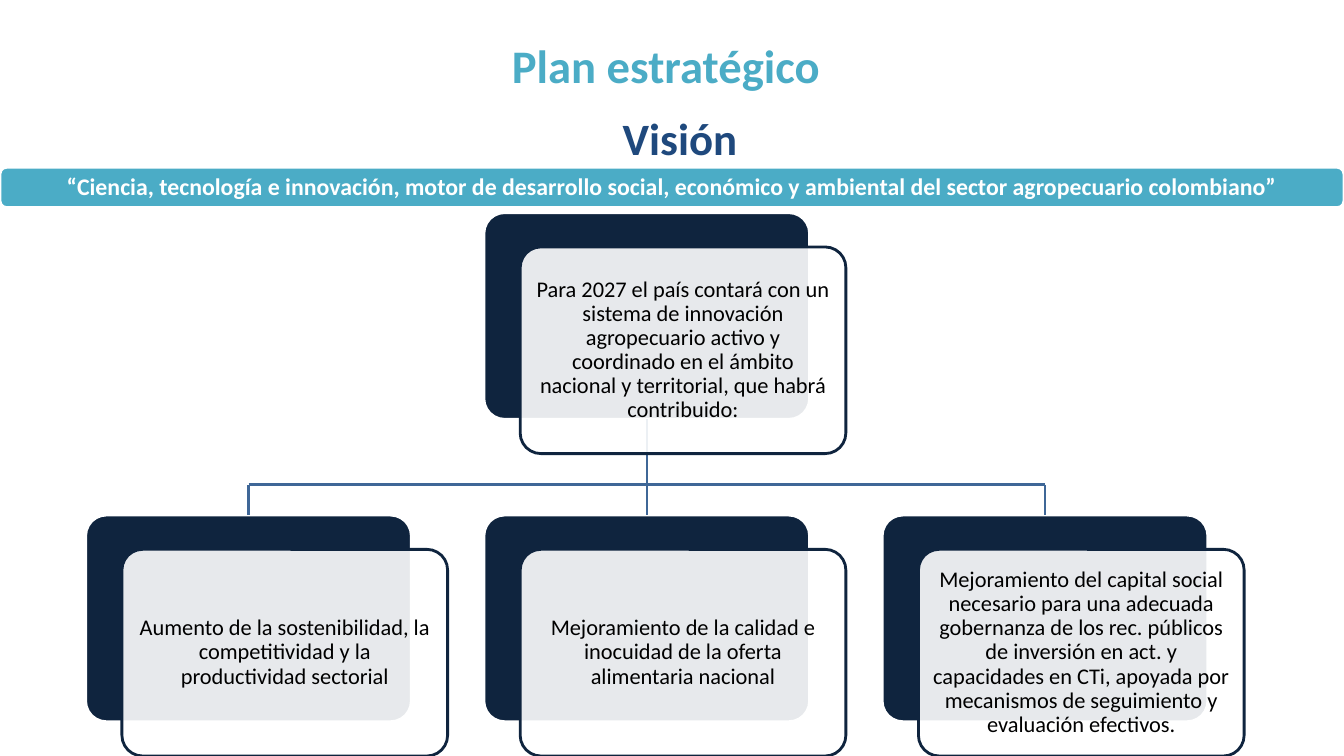
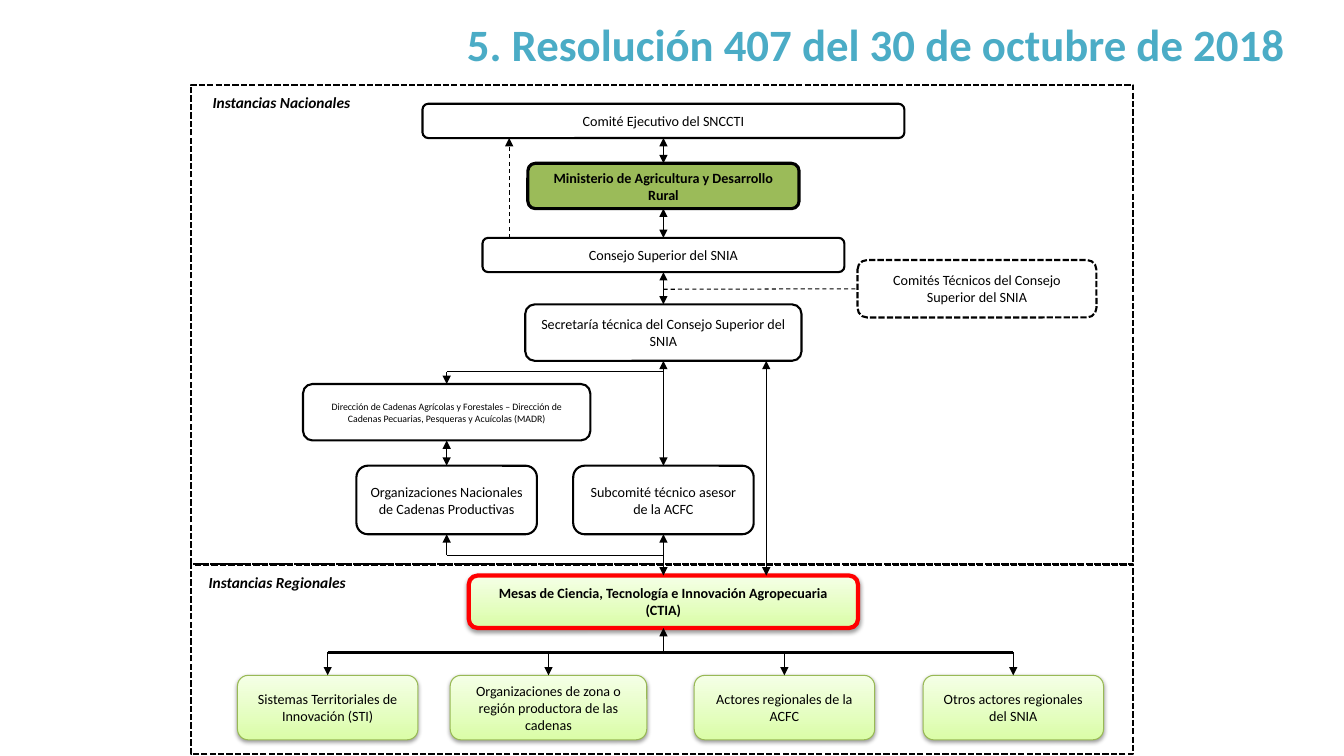
import pptx
import pptx.util
import pptx.dml.color
import pptx.enum.dml
import pptx.enum.shapes
import pptx.enum.text
import pptx.oxml.ns
from lxml import etree

Inch, Pt = pptx.util.Inches, pptx.util.Pt
RGB = pptx.dml.color.RGBColor
Shape = pptx.enum.shapes.MSO_SHAPE
Dash = pptx.enum.dml.MSO_LINE
Align = pptx.enum.text.PP_ALIGN
Mid = pptx.enum.text.MSO_ANCHOR.MIDDLE
Top = pptx.enum.text.MSO_ANCHOR.TOP
qn = pptx.oxml.ns.qn

# Shared look
FONT = "Calibri"
WHITE = RGB(0xFF, 0xFF, 0xFF)
BLACK = RGB(0, 0, 0)
TEAL = RGB(0x4B, 0xAC, 0xC6)
BLUE = RGB(0x1F, 0x49, 0x7D)
NAVY = RGB(0x0F, 0x24, 0x3E)
STEEL = RGB(0x3F, 0x67, 0x97)
GREEN = RGB(0x9B, 0xBB, 0x59)
LEAF = RGB(0x98, 0xB9, 0x55)
RED = RGB(0xFF, 0, 0)
LIME = RGB(0xDA, 0xFD, 0xA7)
PALE = RGB(0xF5, 0xFF, 0xE7)
WIDE, HIGH = 13.33, 7.5

# Slide 1 content
MOTTO = ("“Ciencia, tecnología e innovación, motor de desarrollo social, "
         "económico y ambiental del sector agropecuario colombiano”")
ROOT = ("Para 2027 el país contará con un sistema de innovación agropecuario "
        "activo y coordinado en el ámbito nacional y territorial, que habrá "
        "contribuido:")
GOALS = [
    "Aumento de la sostenibilidad, la competitividad y la productividad "
    "sectorial",
    "Mejoramiento de la calidad e inocuidad de la oferta alimentaria nacional",
    "Mejoramiento del capital social necesario para una adecuada gobernanza "
    "de los rec. públicos de inversión en act. y capacidades en CTi, apoyada "
    "por mecanismos de seguimiento y evaluación efectivos.",
]

# Slide 2 content: main axis, left axis, bus height
AXIS, LEFT, BUS = 6.58, 4.43, 6.47
FRAMES = [(0.84, 4.76), (5.6, 1.88)]
LABELS = [("Instancias Nacionales", 2.01, 0.87),
          ("Instancias Regionales", 1.97, 5.64)]

# Style: fill, line, line width, dash, bold, size
STYLES = {
    "plain": (WHITE, BLACK, 1.5, None, False, 10.1),
    "small": (WHITE, BLACK, 1.5, None, False, 7),
    "dash": (WHITE, BLACK, 1.5, Dash.SQUARE_DOT, False, 10.1),
    "lead": (GREEN, BLACK, 2.25, None, True, 10.1),
    "hub": ((LIME, PALE), RED, 3, None, True, 10.1),
    "local": ((LIME, PALE), LEAF, 0.75, None, False, 10.1),
}

# Box: key, style, centre x, top, width, height, words
BOXES = [
    ("exec", "plain", AXIS, 1.03, 4.78, 0.34, "Comité Ejecutivo del SNCCTI"),
    ("min", "lead", AXIS, 1.62, 2.69, 0.45,
     "Ministerio de Agricultura y Desarrollo Rural"),
    ("board", "plain", AXIS, 2.36, 3.59, 0.34, "Consejo Superior del SNIA"),
    ("tech", "dash", 9.69, 2.58, 2.37, 0.57,
     "Comités Técnicos del Consejo Superior del SNIA"),
    ("sec", "plain", AXIS, 3.02, 2.74, 0.56,
     "Secretaría técnica del Consejo Superior del SNIA"),
    ("chain", "small", LEFT, 3.81, 2.85, 0.56,
     "Dirección de Cadenas Agrícolas y Forestales – Dirección de Cadenas "
     "Pecuarias, Pesqueras y Acuícolas (MADR)"),
    ("org", "plain", LEFT, 4.62, 1.79, 0.68,
     "Organizaciones Nacionales de Cadenas Productivas"),
    ("sub", "plain", AXIS, 4.62, 1.79, 0.68,
     "Subcomité técnico asesor de la ACFC"),
    ("hub", "hub", AXIS, 5.71, 3.86, 0.52,
     "Mesas de Ciencia, Tecnología e Innovación Agropecuaria (CTIA)"),
]
LOCAL = [
    (3.25, 1.79, "Sistemas Territoriales de Innovación (STI)"),
    (5.44, 1.95, "Organizaciones de zona o región productora de las cadenas"),
    (7.78, 1.79, "Actores regionales de la ACFC"),
    (10.05, 1.79, "Otros actores regionales del SNIA"),
]
BOXES += [(f"local{i}", "local", x, 6.7, w, 0.64, words)
          for i, (x, w, words) in enumerate(LOCAL)]

# Link: from, to, arrow ends, dashed; an end is (key, side) or (x, y)
LINKS = [
    (("exec", 2), ("min", 0), "both", False),
    (("min", 2), ("board", 0), "both", False),
    (("board", 2), ("sec", 0), "both", False),
    (("sec", 2), ("sub", 0), "both", False),
    (("chain", 2), ("org", 0), "both", False),
    ((7.6, 3.58), (7.6, 5.71), "both", False),
    ((5.05, 2.36), (5.05, 1.37), "tail", True),
    ((AXIS, 2.87), ("tech", 1), "", True),
    ((AXIS, 3.69), (LEFT, 3.69), "", False),
    ((LEFT, 3.69), ("chain", 0), "tail", False),
    ((AXIS, 5.51), (LEFT, 5.51), "", False),
    ((LEFT, 5.51), ("org", 2), "tail", False),
    ((AXIS, 5.51), ("sub", 2), "tail", False),
    ((AXIS, 5.51), ("hub", 0), "tail", False),
    ((AXIS, BUS), ("hub", 2), "tail", False),
]
LINKS += [((x, BUS), (f"local{i}", 0), "tail", False)
          for i, (x, _, _) in enumerate(LOCAL)]


def write(shape, words, size, color, bold=False, italic=False,
          align=Align.CENTER, anchor=Mid, inset=None, space=None):
    frame = shape.text_frame
    frame.word_wrap = True
    frame.vertical_anchor = anchor
    if inset is not None:
        frame.margin_left = frame.margin_right = Inch(inset)
        frame.margin_top = frame.margin_bottom = Inch(inset)
    para = frame.paragraphs[0]
    para.alignment = align
    if space:
        para.line_spacing = space
    run = para.add_run()
    run.text = words
    font = run.font
    font.name, font.size, font.color.rgb = FONT, Pt(size), color
    font.bold, font.italic = bold, italic


def label(slide, words, at, size, color, **look):
    box = slide.shapes.add_textbox(*map(Inch, at))
    write(box, words, size, color, **look)


def title(slide, words, at, size=32, color=TEAL, anchor=Mid):
    label(slide, words, at, size, color, bold=True, anchor=anchor)


def block(slide, at, fill, line, width, dash=None, kind=Shape.ROUNDED_RECTANGLE):
    shape = slide.shapes.add_shape(kind, *map(Inch, at))
    shape.shadow.inherit = False
    if fill is None:
        shape.fill.background()
    elif isinstance(fill[0], RGB):
        shape.fill.gradient()
        shape.fill.gradient_angle = 90
        for stop, color in zip(shape.fill.gradient_stops, fill):
            stop.color.rgb = color
        glow(shape)
    else:
        shape.fill.solid()
        shape.fill.fore_color.rgb = fill
    shape.line.color.rgb = line
    shape.line.width = Pt(width)
    if dash:
        shape.line.dash_style = dash
    return shape


def glow(shape):
    """Soft shadow straight below the shape."""
    effect = shape.element.spPr.find(qn("a:effectLst"))
    outer = etree.SubElement(effect, qn("a:outerShdw"), blurRad=str(Pt(3.1)),
                             dist=str(Pt(1.6)), dir="5400000", rotWithShape="0")
    color = etree.SubElement(outer, qn("a:srgbClr"), val="000000")
    etree.SubElement(color, qn("a:alpha"), val="38000")


def spot(end, nodes):
    """Turn a link end into a point."""
    if not isinstance(end[0], str):
        return Inch(end[0]), Inch(end[1])
    node = nodes[end[0]]
    across, down = [(0.5, 0), (0, 0.5), (0.5, 1), (1, 0.5)][end[1]]
    return (int(node.left + across * node.width),
            int(node.top + down * node.height))


def link(slide, nodes, start, stop, ends="", dashed=False, color=BLACK,
         width=0.75):
    line = slide.shapes.add_connector(
        pptx.enum.shapes.MSO_CONNECTOR.STRAIGHT,
        *spot(start, nodes), *spot(stop, nodes))
    for end, join in ((start, line.begin_connect), (stop, line.end_connect)):
        if isinstance(end[0], str):
            join(nodes[end[0]], end[1])
    line.line.color.rgb = color
    line.line.width = Pt(width)
    if dashed:
        line.line.dash_style = Dash.DASH
    props = line.element.spPr
    stroke = props.find(qn("a:ln"))
    if ends == "both":
        etree.SubElement(stroke, qn("a:headEnd"), type="triangle")
    if ends:
        etree.SubElement(stroke, qn("a:tailEnd"), type="triangle")
    etree.SubElement(props, qn("a:effectLst"))


def vision(slide):
    title(slide, "Visión", (0.46, 1.11, 12.57, 0.51), color=BLUE)
    title(slide, "Plan estratégico", (0.11, 0.32, 12.99, 0.63), 33.3,
          anchor=Top)
    band = block(slide, (0, 1.66, WIDE, 0.4), TEAL, WHITE, 2)
    write(band, MOTTO, 17, WHITE, bold=True, inset=0.07, space=0.9)

    # Cards: one root over a row of three
    wide, high, step, first, row = 3.23, 2.05, 3.95, 0.85, 5.11
    cards = [("root", first + step, 2.11, ROOT)]
    cards += [(f"goal{i}", first + i * step, row, words)
              for i, words in enumerate(GOALS)]
    nodes = {}
    for key, x, y, _ in cards:
        nodes[key] = block(slide, (x, y, wide, high), NAVY, WHITE, 2)
        nodes[key].adjustments[0] = 0.1

    # Tree lines lie between the back and front of the cards
    bus = 4.81
    mids = [first + i * step + wide / 2 for i in range(len(GOALS))]
    link(slide, nodes, ("root", 2), ("goal1", 0), color=STEEL, width=1.5)
    link(slide, nodes, (mids[0], bus), (mids[-1], bus), color=STEEL, width=2)
    for i in (0, 2):
        link(slide, nodes, (mids[i], bus), (f"goal{i}", 0), color=STEEL,
             width=2)

    for _, x, y, words in cards:
        front = block(slide, (x + 0.36, y + 0.34, wide, high), WHITE, NAVY, 2)
        front.adjustments[0] = 0.1
        tone = front.element.spPr.find(qn("a:solidFill"))[0]
        etree.SubElement(tone, qn("a:alpha"), val="90000")
        write(front, words, 16, BLACK, inset=0.07, space=0.9)


def scheme(slide):
    title(slide, "5. Resolución 407 del 30 de octubre de 2018",
          (3.92, 0.01, 9.54, 0.85))
    for top, high in FRAMES:
        block(slide, (1.89, top, 9.35, high), None, BLACK, 1.5,
              Dash.SQUARE_DOT, Shape.RECTANGLE)
    for words, x, y in LABELS:
        label(slide, words, (x, y, 2.14, 0.48), 11, BLACK, bold=True,
              italic=True, align=Align.LEFT, anchor=Top)

    nodes = {}
    for key, style, mid, top, wide, high, words in BOXES:
        fill, line, width, dash, bold, size = STYLES[style]
        nodes[key] = block(slide, (mid - wide / 2, top, wide, high), fill,
                           line, width, dash)
        write(nodes[key], words, size, BLACK, bold=bold)
    for start, stop, ends, dashed in LINKS:
        link(slide, nodes, start, stop, ends, dashed)
    link(slide, nodes, (LOCAL[0][0], BUS), (LOCAL[-1][0], BUS), width=2.25)


def main():
    deck = pptx.Presentation()
    deck.slide_width, deck.slide_height = Inch(WIDE), Inch(HIGH)
    for draw in (vision, scheme):
        draw(deck.slides.add_slide(deck.slide_layouts[6]))
    deck.save("out.pptx")


if __name__ == "__main__":
    main()
